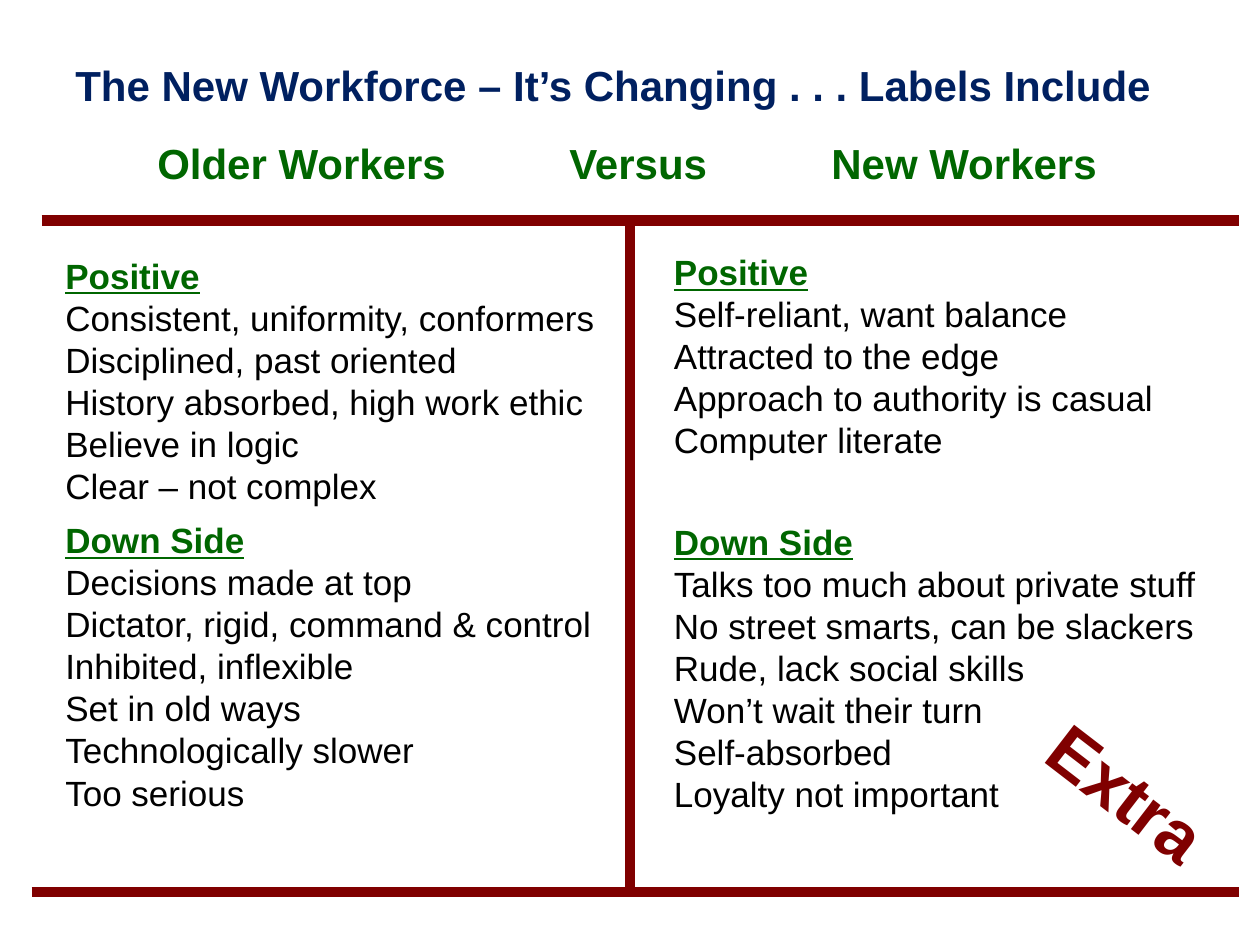
"""Build a slide that compares labels for older and new workers."""
from lxml.etree import SubElement
from pptx import Presentation
from pptx.dml.color import RGBColor
from pptx.enum.shapes import MSO_CONNECTOR as Connector
from pptx.oxml.ns import qn
from pptx.util import Inches, Pt

COLORS = {"title": "002060", "heading": "006600", "body": "000000", "accent": "800000"}

LINES = [
    (0.33, 1.75, 9.83, 1.75),
    (5, 1.75, 5, 7.08),
    (0.25, 7.08, 9.83, 7.08),
]

COLUMNS = [
    (0.42, 4.67, 4.91, 0.27, 7, [
        "Positive",
        "Consistent, uniformity, conformers Disciplined, past oriented",
        "History absorbed, high work ethic",
        "Believe in logic",
        "Clear – not complex",
        "Down Side",
        "Decisions made at top",
        "Dictator, rigid, command & control",
        "Inhibited, inflexible",
        "Set in old ways",
        "Technologically slower",
        "Too serious",
    ]),
    (5.25, 4.58, 4.81, 0.24, 34, [
        "Positive",
        "Self-reliant, want balance",
        "Attracted to the edge",
        "Approach to authority is casual Computer literate",
        "Down Side",
        "Talks too much about private stuff",
        "No street smarts, can be slackers",
        "Rude, lack social skills",
        "Won’t wait their turn",
        "Self-absorbed",
        "Loyalty not important",
    ]),
]


def add_text_box(left, top, width, height, wrap=True):
    shape = slide.shapes.add_textbox(Inches(left), Inches(top), Inches(width), Inches(height))
    shape.text_frame.word_wrap = wrap
    return shape


def format_runs(paragraph, size, color, bold=False, underline=False):
    for run in paragraph.runs:
        font = run.font
        font.name = "Arial"
        font.size = Pt(size)
        font.bold = bold
        font.underline = underline
        font.color.rgb = RGBColor.from_string(COLORS[color])


presentation = Presentation()
presentation.slide_width = Inches(10)
presentation.slide_height = Inches(7.5)
slide = presentation.slides.add_slide(presentation.slide_layouts[6])

header = add_text_box(0.5, 0.42, 9, 1.3).text_frame
header.text = "The New Workforce – It’s Changing . . . Labels Include\n\tOlder Workers\tVersus\tNew Workers"
title, labels = header.paragraphs
format_runs(title, 24, "title", bold=True)
format_runs(labels, 24, "heading", bold=True)
labels.space_before = Pt(16)
tab_list = SubElement(labels._p.get_or_add_pPr(), qn("a:tabLst"))
for position in (0.65, 3.92, 6):
    SubElement(tab_list, qn("a:tab"), pos=str(Inches(position)), algn="l")

for start_x, start_y, end_x, end_y in LINES:
    line = slide.shapes.add_connector(
        Connector.STRAIGHT, Inches(start_x), Inches(start_y), Inches(end_x), Inches(end_y))
    line.line.width = Pt(6)
    line.line.color.rgb = RGBColor.from_string(COLORS["accent"])
    SubElement(line._element.spPr, qn("a:effectLst"))

for left, width, height, inset, gap, entries in COLUMNS:
    text_frame = add_text_box(left, 1.75, width, height).text_frame
    text_frame.margin_top = Inches(inset)
    text_frame.text = "\n".join(entries)
    for paragraph in text_frame.paragraphs:
        if paragraph.text in ("Positive", "Down Side"):
            format_runs(paragraph, 20, "heading", bold=True, underline=True)
        else:
            format_runs(paragraph, 20, "body")
        if paragraph.text == "Down Side":
            paragraph.space_before = Pt(gap)

stamp = add_text_box(8.13, 5.9, 1.61, 0.85, wrap=False)
stamp.rotation = 37.6
stamp.text_frame.text = "Extra"
format_runs(stamp.text_frame.paragraphs[0], 40, "accent", bold=True)

presentation.save("out.pptx")
